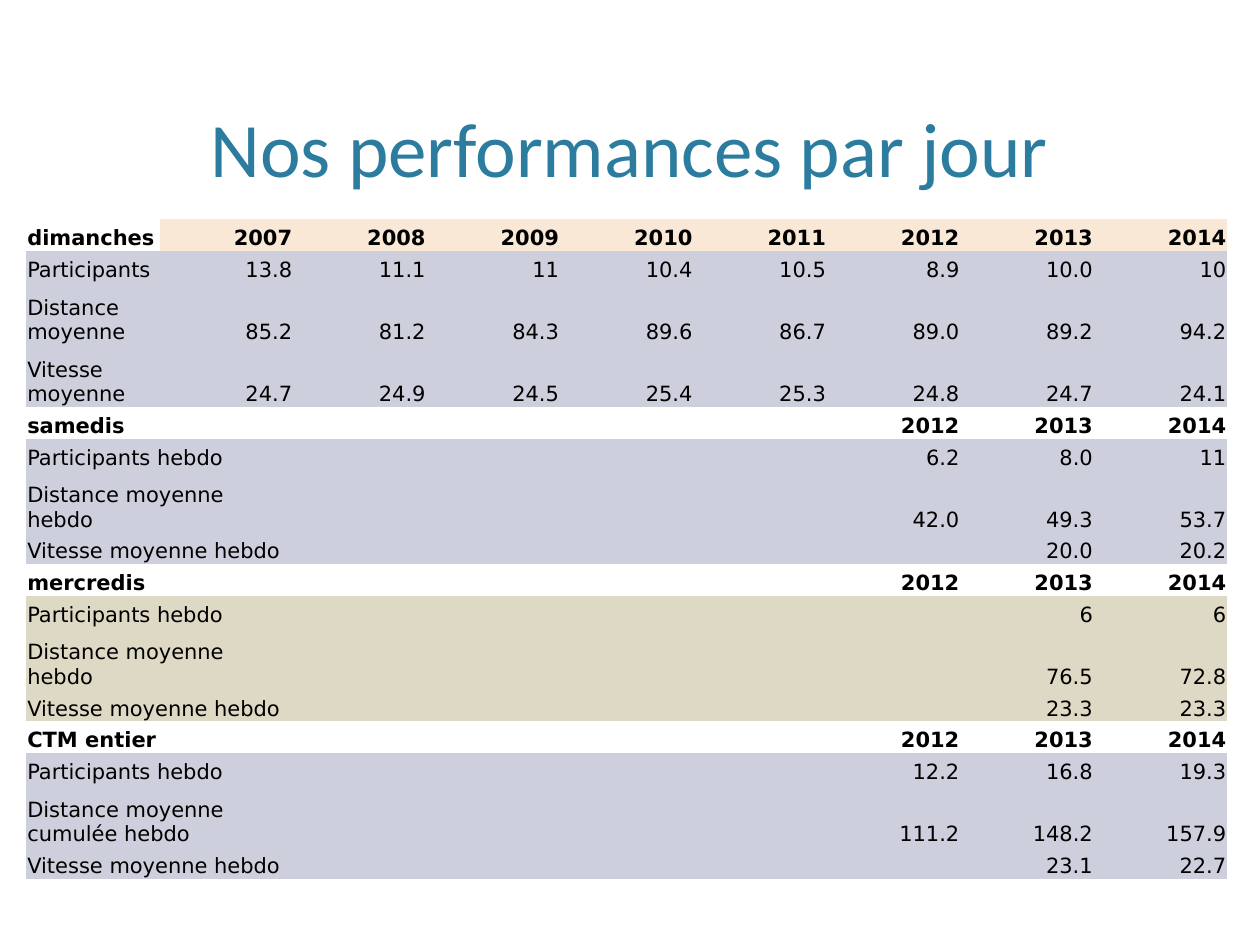
from lxml.etree import SubElement
from pptx import Presentation
from pptx.dml.color import RGBColor
from pptx.enum.text import MSO_ANCHOR as Anchor, PP_ALIGN as Align
from pptx.oxml.ns import qn
from pptx.util import Cm, Pt

BLACK = RGBColor(0x00, 0x00, 0x00)
WHITE = RGBColor(0xFF, 0xFF, 0xFF)
TEAL = RGBColor(0x2C, 0x7C, 0x9F)
PEACH = RGBColor(0xFA, 0xE8, 0xD6)
LILAC = RGBColor(0xCD, 0xCF, 0xDC)
SAND = RGBColor(0xDD, 0xD9, 0xC4)

# Content: (day, years, header fill, body fill, rows); values align right
TITLE = "Nos performances par jour"
RECENT = ["2012", "2013", "2014"]
SECTIONS = [
    ("dimanches", ["2007", "2008", "2009", "2010", "2011"] + RECENT, PEACH, LILAC, [
        ("Participants", ["13.8", "11.1", "11", "10.4", "10.5", "8.9", "10.0", "10"]),
        ("Distance moyenne", ["85.2", "81.2", "84.3", "89.6", "86.7", "89.0", "89.2", "94.2"]),
        ("Vitesse moyenne", ["24.7", "24.9", "24.5", "25.4", "25.3", "24.8", "24.7", "24.1"]),
    ]),
    ("samedis", RECENT, None, LILAC, [
        ("Participants hebdo", ["6.2", "8.0", "11"]),
        ("Distance moyenne hebdo", ["42.0", "49.3", "53.7"]),
        ("Vitesse moyenne hebdo", ["20.0", "20.2"]),
    ]),
    ("mercredis", RECENT, WHITE, SAND, [
        ("Participants hebdo", ["6", "6"]),
        ("Distance moyenne hebdo", ["76.5", "72.8"]),
        ("Vitesse moyenne hebdo", ["23.3", "23.3"]),
    ]),
    ("CTM entier", RECENT, WHITE, LILAC, [
        ("Participants hebdo", ["12.2", "16.8", "19.3"]),
        ("Distance moyenne cumulée hebdo", ["111.2", "148.2", "157.9"]),
        ("Vitesse moyenne hebdo", ["23.1", "22.7"]),
    ]),
]
COLUMNS = 9
COLUMN_WIDTH = Cm(2.69)
LOW_ROW, TALL_ROW = Cm(0.64), Cm(1.25)
TWO_LINE_LABELS = ("Distance", "Vitesse moyenne")
PLAIN_STYLE = "{2D5ABB26-0587-4C30-8999-92F81FD0307C}"


def fill_cell(cell, text, align, bold, color):
    cell.margin_left = cell.margin_right = cell.margin_top = Cm(0.02)
    cell.margin_bottom = 0
    cell.vertical_anchor = Anchor.BOTTOM
    if color is None:
        cell.fill.background()
    else:
        cell.fill.solid()
        cell.fill.fore_color.rgb = color
    para = cell.text_frame.paragraphs[0]
    para.alignment = align
    para.font.name, para.font.size = "DejaVu Sans", Pt(12)
    para.font.bold, para.font.color.rgb = bold, BLACK
    if text:
        para.add_run().text = text
    else:
        # Keeps empty cells from stretching their row
        SubElement(para._p, qn("a:endParaRPr"), sz="1200")


def fill_row(table, index, label, values, bold, label_color, color):
    texts = [label] + [""] * (COLUMNS - 1 - len(values)) + values
    for column, text in enumerate(texts):
        first = column == 0
        fill_cell(table.cell(index, column), text, Align.LEFT if first else Align.RIGHT,
                  bold, label_color if first else color)


deck = Presentation()
deck.slide_width, deck.slide_height = Cm(25.4), Cm(19.05)
page = deck.slides.add_slide(deck.slide_layouts[6])

# Title
box = page.shapes.add_textbox(Cm(1.52), Cm(0.3), Cm(22.35), Cm(3.71))
box.text_frame.word_wrap = True
box.text_frame.vertical_anchor = Anchor.BOTTOM
para = box.text_frame.paragraphs[0]
para.text = TITLE
para.alignment = Align.CENTER
para.font.name, para.font.size = "Calibri", Pt(44)
para.font.color.rgb = TEAL

# Table
row_count = sum(1 + len(rows) for *_, rows in SECTIONS)
frame = page.shapes.add_table(row_count, COLUMNS, Cm(0.53), Cm(4.42),
                              COLUMN_WIDTH * COLUMNS, LOW_ROW * row_count)
table = frame.table
table.first_row = table.horz_banding = False
table._tbl.tblPr.find(qn("a:tableStyleId")).text = PLAIN_STYLE
for column in table.columns:
    column.width = COLUMN_WIDTH

index = 0
for day, years, head_color, body_color, rows in SECTIONS:
    day_color = None if head_color == PEACH else head_color
    fill_row(table, index, day, years, True, day_color, head_color)
    table.rows[index].height = LOW_ROW
    for index, (label, values) in enumerate(rows, index + 1):
        fill_row(table, index, label, values, False, body_color, body_color)
        two_lines = label.startswith("Distance") or label == "Vitesse moyenne"
        table.rows[index].height = TALL_ROW if two_lines else LOW_ROW
        if label.endswith("hebdo"):
            table.cell(index, 0).merge(table.cell(index, 1))
    index += 1

deck.save("out.pptx")
